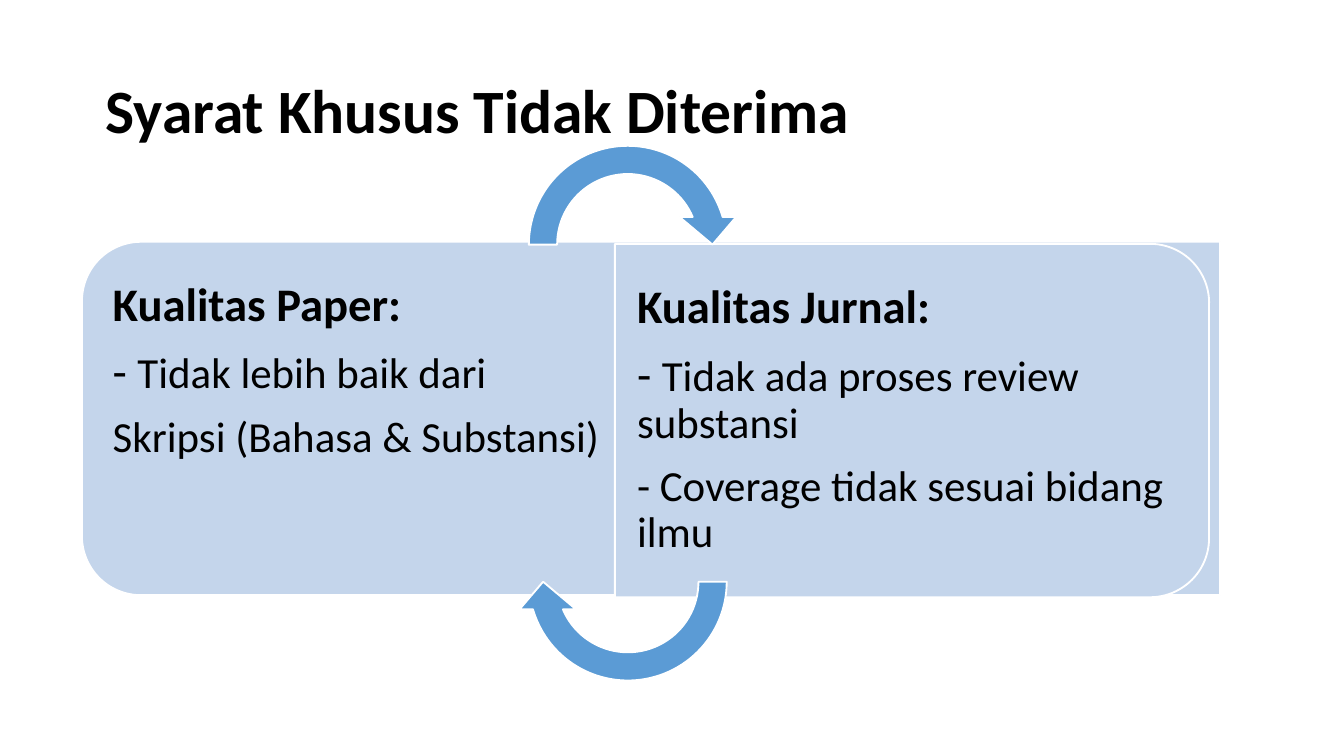
from dataclasses import dataclass

from pptx import Presentation
from pptx.dml.color import RGBColor
from pptx.enum.shapes import MSO_SHAPE as Shape
from pptx.enum.text import MSO_ANCHOR as Anchor
from pptx.util import Cm, Pt

COLORS = {"text": "000000", "panel": "C4D5EB", "arrow": "5B9BD5", "line": "FFFFFF"}
FONT = "Calibri"
HEADING_PT, BODY_PT = 25, 23
PANEL_HEIGHT = 6.68
ARROW_LEFT, ARROW_SIZE = 9.73, 4.27
ARROW_ADJUSTMENTS = (0.125, 11.423, 204.577, 108, 0.125)


@dataclass(frozen=True)
class Box:
    """A rectangle in centimetres."""
    left: float
    top: float
    width: float
    height: float

    def lengths(self):
        return Cm(self.left), Cm(self.top), Cm(self.width), Cm(self.height)


@dataclass(frozen=True)
class Panel:
    box: Box
    rotation: int
    text_box: Box
    insets: tuple[float, float, float, float]
    heading: str
    first_item: str
    second_item: str


@dataclass(frozen=True)
class Arrow:
    top: float
    rotation: int


PANELS = [
    Panel(Box(1.55, 4.57, 21.51, PANEL_HEIGHT), 270,
          Box(1.88, 4.88, 21.18, 6.05), (0.25, 0.43, 0.41, 0.43),
          "Kualitas Paper:", "Tidak lebih baik dari", "Skripsi (Bahasa & Substansi)"),
    Panel(Box(11.62, 4.61, 11.23, PANEL_HEIGHT), 90,
          Box(11.63, 4.93, 10.9, 6.05), (0.41, 0.43, 0.25, 0.43),
          "Kualitas Jurnal:", "Tidak ada proses review substansi",
          "- Coverage tidak sesuai bidang ilmu"),
]
ARROWS = [Arrow(2.49, 0), Arrow(8.86, 180)]


def rgb(name: str) -> RGBColor:
    return RGBColor.from_string(COLORS[name])


def add_run(p, text: str, size: float, bold: bool = False) -> None:
    r = p.add_run()
    r.text = text
    r.font.name, r.font.size, r.font.bold = FONT, Pt(size), bold
    r.font.color.rgb = rgb("text")


def add_text_frame(s, box: Box):
    tf = s.shapes.add_textbox(*box.lengths()).text_frame
    tf.word_wrap = True
    return tf


def add_outlined(s, kind: Shape, box: Box, fill: str, rotation: int, adjustments) -> None:
    sp = s.shapes.add_shape(kind, *box.lengths())
    sp.shadow.inherit = False
    sp.rotation = rotation
    sp.fill.solid()
    sp.fill.fore_color.rgb = rgb(fill)
    sp.line.color.rgb = rgb("line")
    sp.line.width = Pt(1)
    for i, value in enumerate(adjustments):
        sp.adjustments[i] = value


def quarter_turned(box: Box) -> Box:
    """Return the frame that covers the box after a turn of 90 degrees."""
    shift = (box.width - box.height) / 2
    return Box(box.left + shift, box.top - shift, box.height, box.width)


def add_title(s, text: str) -> None:
    tf = add_text_frame(s, Box(1.75, 0.76, 21.89, 2.77))
    tf.vertical_anchor = Anchor.MIDDLE
    p = tf.paragraphs[0]
    p.line_spacing = 0.9
    add_run(p, text, 33, bold=True)


def add_panel(s, panel: Panel) -> None:
    add_outlined(s, Shape.ROUND_2_SAME_RECTANGLE, quarter_turned(panel.box),
                 "panel", panel.rotation, (0.167, 0))
    tf = add_text_frame(s, panel.text_box)
    tf.margin_left, tf.margin_top, tf.margin_right, tf.margin_bottom = map(Cm, panel.insets)
    heading, first, second = tf.paragraphs[0], tf.add_paragraph(), tf.add_paragraph()
    for p in (heading, first, second):
        p.line_spacing = 0.9
        p.space_after = Pt(9)
    add_run(heading, panel.heading, HEADING_PT, bold=True)
    add_run(first, "- ", HEADING_PT)
    add_run(first, panel.first_item, BODY_PT)
    add_run(second, panel.second_item, BODY_PT)


def add_arrow(s, arrow: Arrow) -> None:
    add_outlined(s, Shape.CIRCULAR_ARROW, Box(ARROW_LEFT, arrow.top, ARROW_SIZE, ARROW_SIZE),
                 "arrow", arrow.rotation, ARROW_ADJUSTMENTS)


def main() -> None:
    prs = Presentation()
    prs.slide_width, prs.slide_height = Cm(25.4), Cm(14.29)
    s = prs.slides.add_slide(prs.slide_layouts[6])
    add_title(s, "Syarat Khusus Tidak Diterima")
    for panel in PANELS:
        add_panel(s, panel)
    for arrow in ARROWS:
        add_arrow(s, arrow)
    prs.save("out.pptx")


if __name__ == "__main__":
    main()
